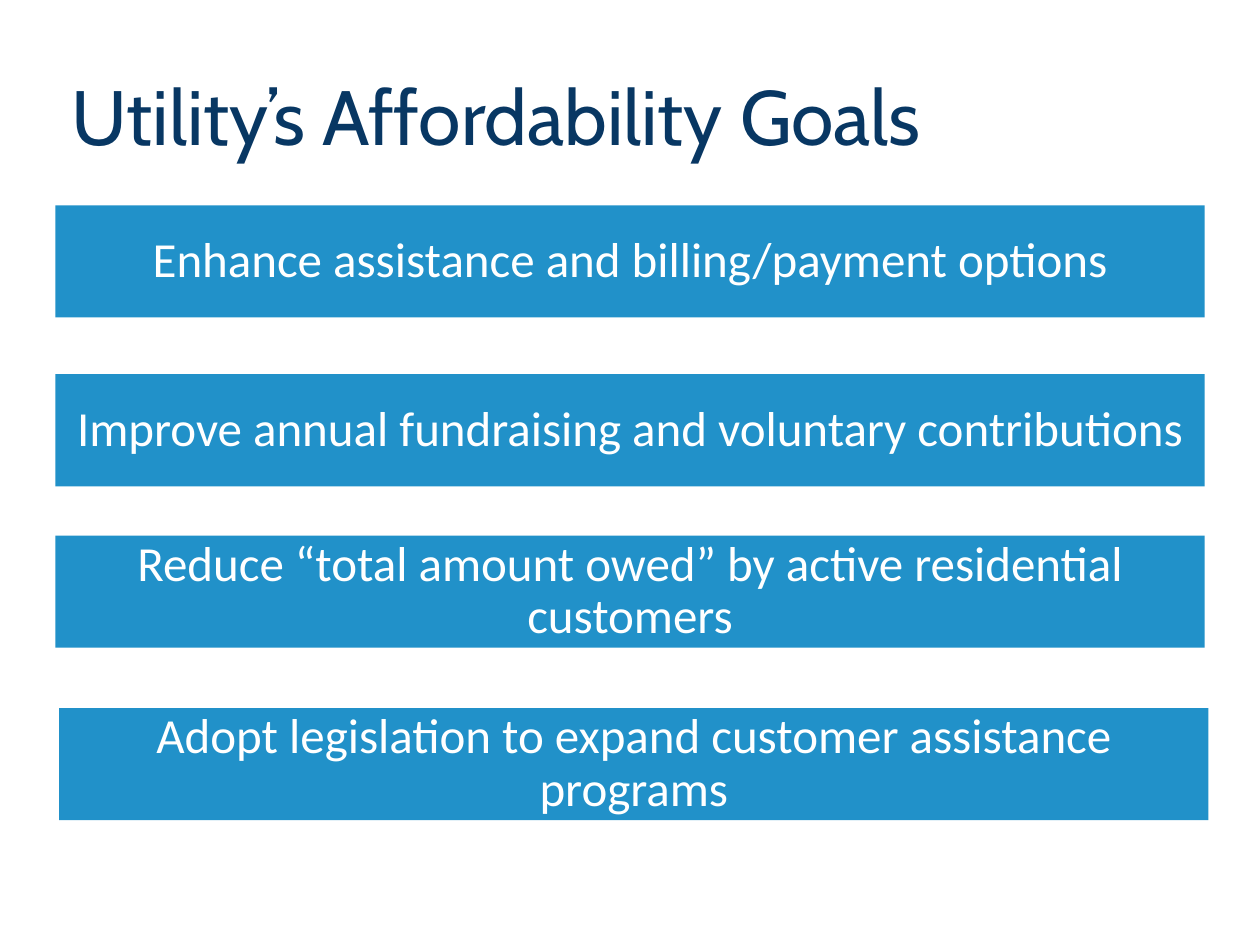
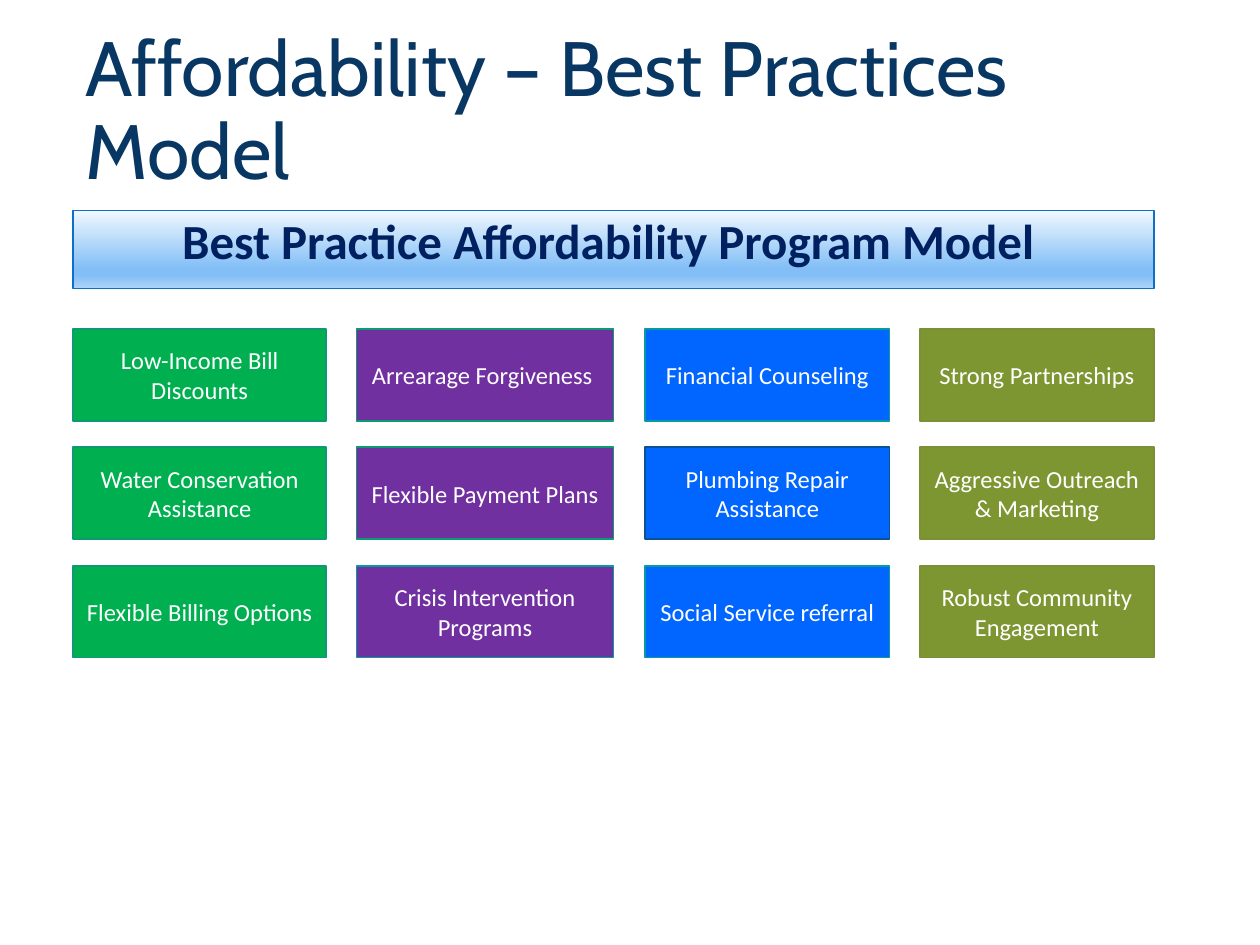
import pptx
import pptx.util
import pptx.dml.color
import pptx.enum.shapes
import pptx.enum.text
from lxml import etree

# Content
GOALS = [  # left, top, text
    (0.44, 1.63, "Enhance assistance and billing/payment options"),
    (0.44, 2.97, "Improve annual fundraising and voluntary contributions"),
    (0.44, 4.25, "Reduce “total amount owed” by active residential customers"),
    (0.47, 5.62, "Adopt legislation to expand customer assistance programs"),
]
MODEL = [  # left, width, fill, edge, texts from top to bottom
    (0.58, 2.01, "00B050", "0C9973",
     ["Low-Income Bill Discounts", "Water Conservation Assistance",
      "Flexible Billing Options"]),
    (2.83, 2.04, "7030A0", "0C9973",
     ["Arrearage Forgiveness ", "Flexible Payment Plans",
      "Crisis Intervention Programs"]),
    (5.12, 1.94, "0066FF", "089AA1",
     ["Financial Counseling", "Plumbing Repair Assistance",
      "Social Service referral"]),
    (7.3, 1.86, "7E9632", "7A9036",
     ["Strong Partnerships", "Aggressive Outreach & Marketing",
      "Robust Community Engagement"]),
]
EDGES = {"Plumbing Repair Assistance": "0B5394",
         "Crisis Intervention Programs": "089AA1"}
STOPS = [(0, "F1F8FE"), (74, "83BFF6"), (83, "83BFF6"), (100, "ACD4F9")]

# Shared style
NAVY, SKY, WHITE = "083763", "2191C9", "FFFFFF"
TOP, STEP, TALL = 2.61, 0.94, 0.73
ALIGN = pptx.enum.text.PP_ALIGN
ANCHOR = pptx.enum.text.MSO_ANCHOR


def hue(code):
    return pptx.dml.color.RGBColor.from_string(code)


def inch(*sizes):
    return [pptx.util.Inches(size) for size in sizes]


def write(shape, text, size, color, face="Calibri", align=ALIGN.CENTER,
          space=1.0, bold=False):
    frame = shape.text_frame
    frame.word_wrap = True
    frame.vertical_anchor = ANCHOR.MIDDLE
    frame.text = text
    para = frame.paragraphs[0]
    para.alignment = align
    para.line_spacing = space
    font = para.runs[0].font
    font.size = pptx.util.Pt(size)
    font.name = face
    font.bold = bold
    font.color.rgb = hue(color)


def title(slide, text, *spot):
    box = slide.shapes.add_textbox(*inch(*spot))
    write(box, text, 44, NAVY, "Cabin", ALIGN.LEFT, 0.9)


def block(slide, spot, fill, edge=None, width=1):
    kind = pptx.enum.shapes.MSO_SHAPE.RECTANGLE
    shape = slide.shapes.add_shape(kind, *inch(*spot))
    shape.shadow.inherit = False
    if fill:
        shape.fill.solid()
        shape.fill.fore_color.rgb = hue(fill)
    if edge:
        shape.line.color.rgb = hue(edge)
        shape.line.width = pptx.util.Pt(width)
    else:
        shape.line.fill.background()
    return shape


def shade(shape, stops):
    shape.fill.gradient()
    shape.fill.gradient_angle = 270
    ns = "{http://schemas.openxmlformats.org/drawingml/2006/main}"
    group = shape.element.spPr.find(f"{ns}gradFill/{ns}gsLst")
    for old in list(group):
        group.remove(old)
    for share, code in stops:
        stop = etree.SubElement(group, ns + "gs", pos=str(share * 1000))
        etree.SubElement(stop, ns + "srgbClr", val=code)


def goals(slide):
    title(slide, "Utility’s Affordability Goals", 0.47, 0.4, 9.12, 1.12)
    for left, top, text in GOALS:
        bar = block(slide, (left, top, 9.12, 0.89), SKY)
        write(bar, text, 28, WHITE, space=0.9)


def model(slide):
    title(slide, "Affordability – Best Practices Model", 0.58, 0.49, 8.33, 0.81)

    # Banner
    banner = block(slide, (0.58, 1.67, 8.58, 0.62), None, "0F6FC6", 0.75)
    shade(banner, STOPS)
    write(banner, "Best Practice Affordability Program Model ", 28, "002060",
          bold=True)
    frame = banner.text_frame
    frame.vertical_anchor = ANCHOR.TOP
    frame.margin_left = frame.margin_right = 0
    frame.margin_top = frame.margin_bottom = 0

    # Grid of practices
    for left, width, fill, edge, texts in MODEL:
        for row, text in enumerate(texts):
            spot = (left, TOP + row * STEP, width, TALL)
            cell = block(slide, spot, fill, EDGES.get(text, edge))
            write(cell, text, 14, WHITE)


def main():
    deck = pptx.Presentation()
    deck.slide_width, deck.slide_height = inch(10, 7.5)
    for draw in (goals, model):
        draw(deck.slides.add_slide(deck.slide_layouts[6]))
    deck.save("out.pptx")


if __name__ == "__main__":
    main()
